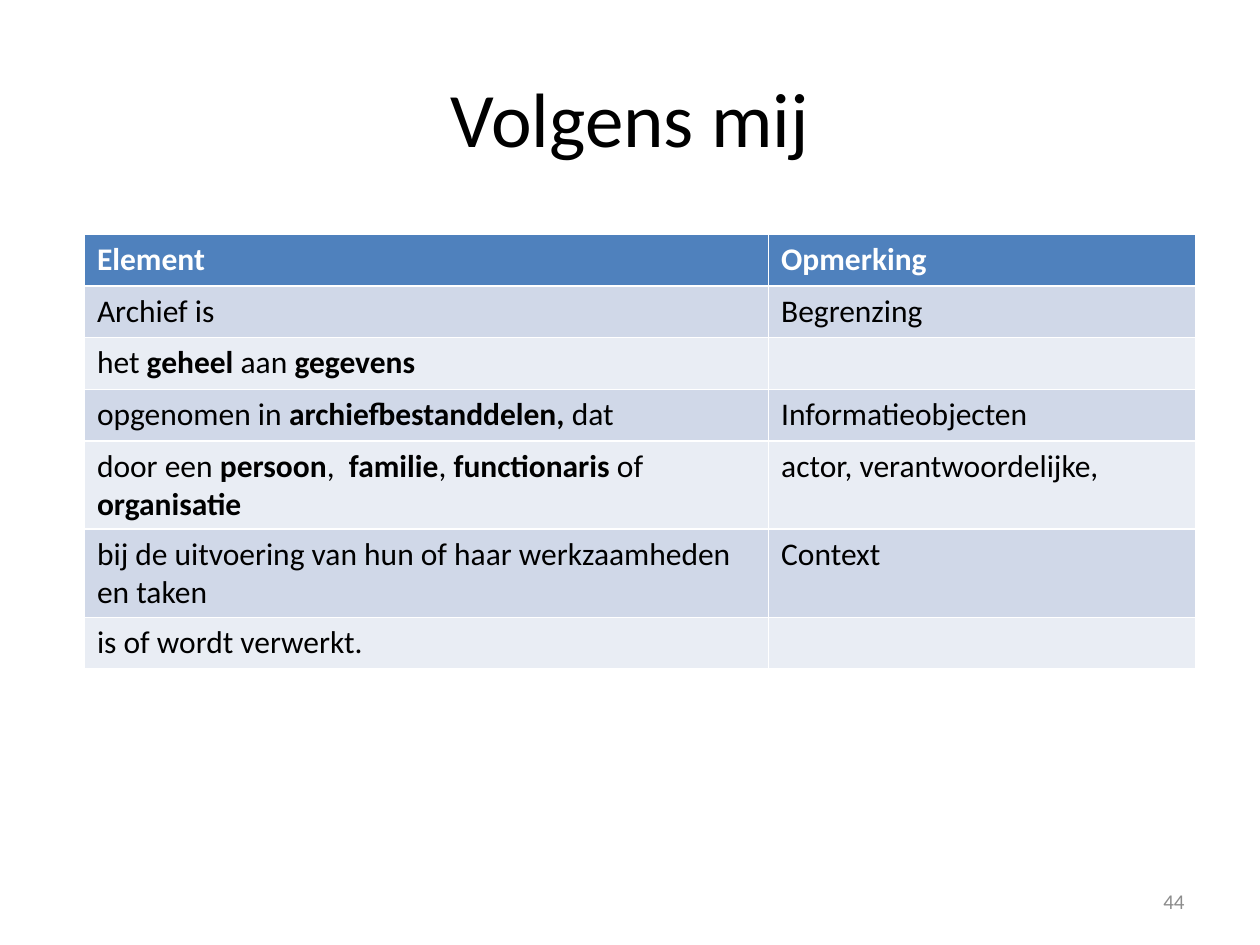
"""Build the slide 'Volgens mij' with its table of definition elements."""
from pptx import Presentation
from pptx.dml.color import RGBColor
from pptx.enum import text
from pptx.util import Inches, Pt


def color(value):
    return RGBColor.from_string(value)


def write(paragraph, marked, size, ink, bold=False):
    for position, part in enumerate(marked.split("*")):
        if part:
            run = paragraph.add_run()
            run.text = part
            font_format = {"name": "Calibri", "size": Pt(size), "bold": bold or position % 2 == 1}
            for attribute, value in font_format.items():
                setattr(run.font, attribute, value)
            run.font.color.rgb = color(ink)


deck = Presentation()
deck.slide_width, deck.slide_height = Inches(10), Inches(7.5)
slide = deck.slides.add_slide(deck.slide_layouts[6])

labels = [
    ("Volgens mij", (0.5, 0.3, 9, 1.25), 44, "000000", text.PP_ALIGN.CENTER),
    ("44", (7.17, 6.95, 2.33, 0.4), 12, "8C8C8C", text.PP_ALIGN.RIGHT),
]
for wording, place, size, ink, alignment in labels:
    frame = slide.shapes.add_textbox(*map(Inches, place)).text_frame
    frame.word_wrap = True
    frame.vertical_anchor = text.MSO_ANCHOR.MIDDLE
    frame.paragraphs[0].alignment = alignment
    write(frame.paragraphs[0], wording, size, ink)

elements = [
    ("Element", "Opmerking"),
    ("Archief is", "Begrenzing"),
    ("het *geheel* aan *gegevens*", ""),
    ("opgenomen in *archiefbestanddelen,* dat", "Informatieobjecten"),
    ("door een *persoon*,  *familie*, *functionaris* of *organisatie*", "actor, verantwoordelijke,"),
    ("bij de uitvoering van hun of haar werkzaamheden en taken", "Context"),
    ("is of wordt verwerkt.", ""),
]
widths = [5.43, 3.39]
row_height = 0.41
definition = slide.shapes.add_table(
    len(elements), len(widths), Inches(0.67), Inches(1.86),
    Inches(sum(widths)), Inches(row_height * len(elements))).table
for column, width in zip(definition.columns, widths):
    column.width = Inches(width)

for row, remarks in enumerate(elements):
    definition.rows[row].height = Inches(row_height)
    heading = row == 0
    band = "4F81BD" if heading else ("E9EDF4", "D0D8E8")[row % 2]
    for column, wording in enumerate(remarks):
        cell = definition.cell(row, column)
        cell.fill.solid()
        cell.fill.fore_color.rgb = color(band)
        write(cell.text_frame.paragraphs[0], wording, 18, "FFFFFF" if heading else "000000", heading)

deck.save("out.pptx")
